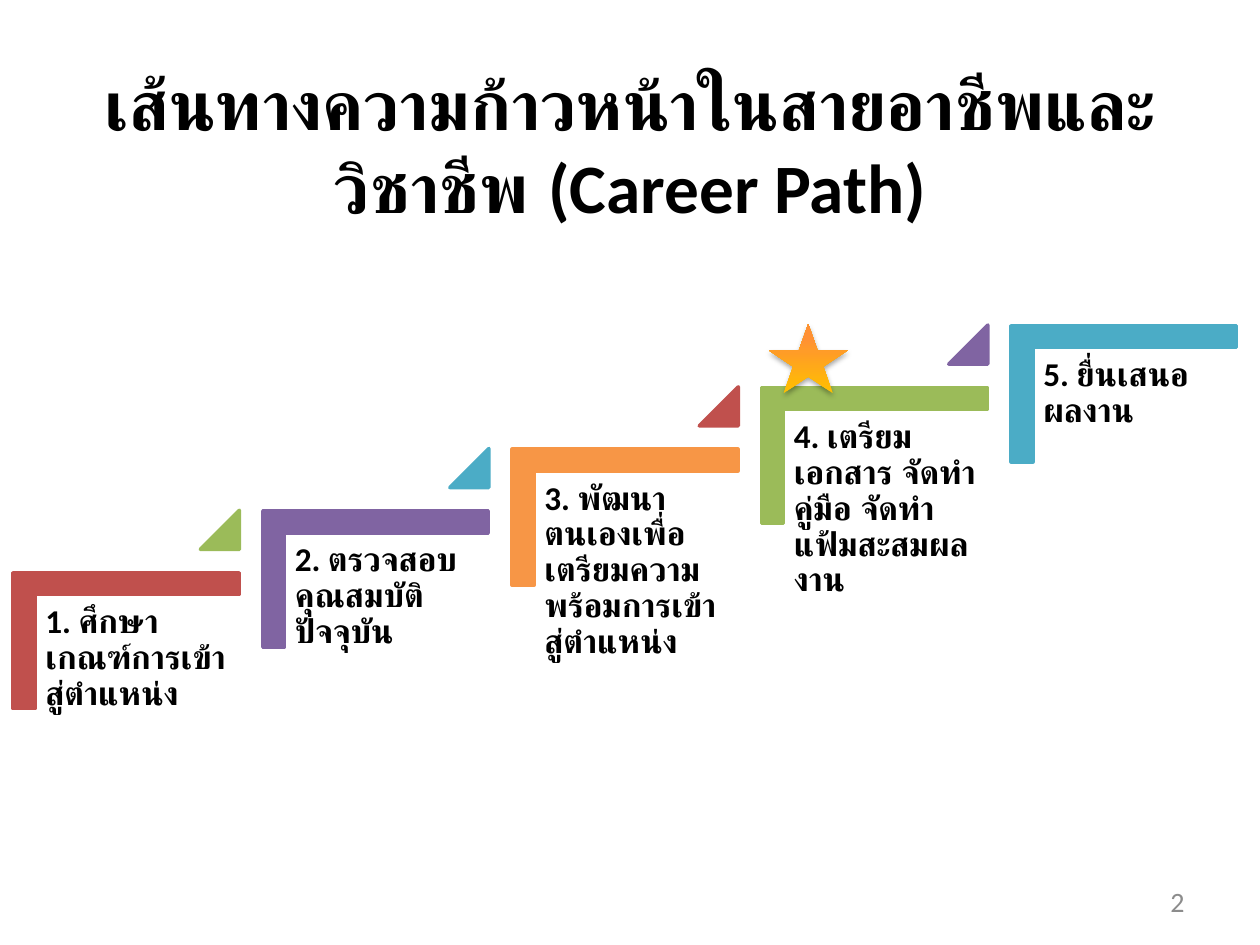
import pptx
import pptx.util
import pptx.dml.color
from lxml import etree
from pptx.enum.shapes import MSO_SHAPE
from pptx.enum.text import MSO_ANCHOR, PP_ALIGN
from pptx.oxml.ns import qn

COLORS = {
    "red": "C0504D", "purple": "8064A2", "orange": "F79646",
    "green": "9BBB59", "teal": "4BACC6", "black": "000000",
    "grey": "8C8C8C", "star_low": "FFC000", "star_high": "FF9034",
}
TITLE = "เส้นทางความก้าวหน้าในสายอาชีพและวิชาชีพ (Career Path)"
PAGE = "2"
# Step text, corner colour, colour of the triangle leading to the next step
STEPS = [
    ("1. ศึกษาเกณฑ์การเข้าสู่ตำแหน่ง", "red", "green"),
    ("2. ตรวจสอบคุณสมบัติปัจจุบัน", "purple", "teal"),
    ("3. พัฒนาตนเองเพื่อเตรียมความพร้อมการเข้าสู่ตำแหน่ง", "orange", "red"),
    ("4. เตรียมเอกสาร จัดทำคู่มือ จัดทำแฟ้มสะสมผลงาน", "green", "purple"),
    ("5. ยื่นเสนอผลงาน", "teal", None),
]
STEP_X, STEP_Y = 1.98, -0.49
CORNER = (0.46, 4.19, 1.08, 1.79)
LABEL = (0.28, 4.72, 1.62, 1.42)
TRIANGLE = (1.59, 4.05, 0.31, 0.31)

prs = pptx.Presentation()
prs.slide_width = pptx.util.Inches(10)
prs.slide_height = pptx.util.Inches(7.5)
s = prs.slides.add_slide(prs.slide_layouts[6])


def rgb(name):
    return pptx.dml.color.RGBColor.from_string(COLORS[name])


def inches(box):
    return [pptx.util.Inches(v) for v in box]


def add_text(box, text, size, color="black", bold=True, align=PP_ALIGN.LEFT,
             anchor=MSO_ANCHOR.TOP, inset=(0.1, 0.05), spacing=None):
    tf = s.shapes.add_textbox(*inches(box)).text_frame
    tf.word_wrap = True
    tf.vertical_anchor = anchor
    tf.margin_left = tf.margin_right = pptx.util.Inches(inset[0])
    tf.margin_top = tf.margin_bottom = pptx.util.Inches(inset[1])
    p = tf.paragraphs[0]
    p.alignment = align
    p.line_spacing = spacing
    r = p.add_run()
    r.text = text
    r.font.name = "Calibri"
    r.font.size = pptx.util.Pt(size)
    r.font.bold = bold
    r.font.color.rgb = rgb(color)


def add_solid(kind, box, color, adjustments):
    sp = s.shapes.add_shape(kind, *inches(box))
    sp.shadow.inherit = False
    sp.fill.solid()
    sp.fill.fore_color.rgb = rgb(color)
    sp.line.color.rgb = rgb(color)
    sp.line.width = pptx.util.Pt(2)
    for i, value in enumerate(adjustments):
        sp.adjustments[i] = value
    return sp


def add_star(box):
    sp = s.shapes.add_shape(MSO_SHAPE.STAR_5_POINT, *inches(box))
    sp.line.fill.background()
    sp.fill.gradient()
    sp.fill.gradient_angle = 90
    stops = sp.fill.gradient_stops
    for stop, color, position in zip(stops, ("star_low", "star_high"), (0, 0.8)):
        stop.color.rgb = rgb(color)
        stop.position = position
    sp.shadow.inherit = False
    effects = sp.element.spPr.find(qn("a:effectLst"))
    shadow = etree.SubElement(
        effects, qn("a:outerShdw"), blurRad=str(pptx.util.Pt(3.1)),
        dist=str(pptx.util.Pt(1.8)), dir="5400000", rotWithShape="0")
    black = etree.SubElement(shadow, qn("a:srgbClr"), val=COLORS["black"])
    etree.SubElement(black, qn("a:alpha"), val="35000")


add_text((0.5, 0.52, 9, 1.25), TITLE, 39.6, align=PP_ALIGN.CENTER,
         anchor=MSO_ANCHOR.MIDDLE)

for i, (text, color, next_color) in enumerate(STEPS):
    corner, label, triangle = (
        (x + i * STEP_X, y + i * STEP_Y, w, h)
        for x, y, w, h in (CORNER, LABEL, TRIANGLE))
    add_solid(MSO_SHAPE.CORNER, corner, color, (0.161, 0.161)).rotation = 90
    add_text(label, text, 19, inset=(0.08, 0.08), spacing=0.9)
    if next_color:
        add_solid(MSO_SHAPE.ISOSCELES_TRIANGLE, triangle, next_color, (1,))

add_text((7.17, 6.95, 2.33, 0.4), PAGE, 16, "grey", bold=False,
         align=PP_ALIGN.RIGHT, anchor=MSO_ANCHOR.MIDDLE)
add_star((6.1, 2.57, 0.63, 0.55))

prs.save("out.pptx")
